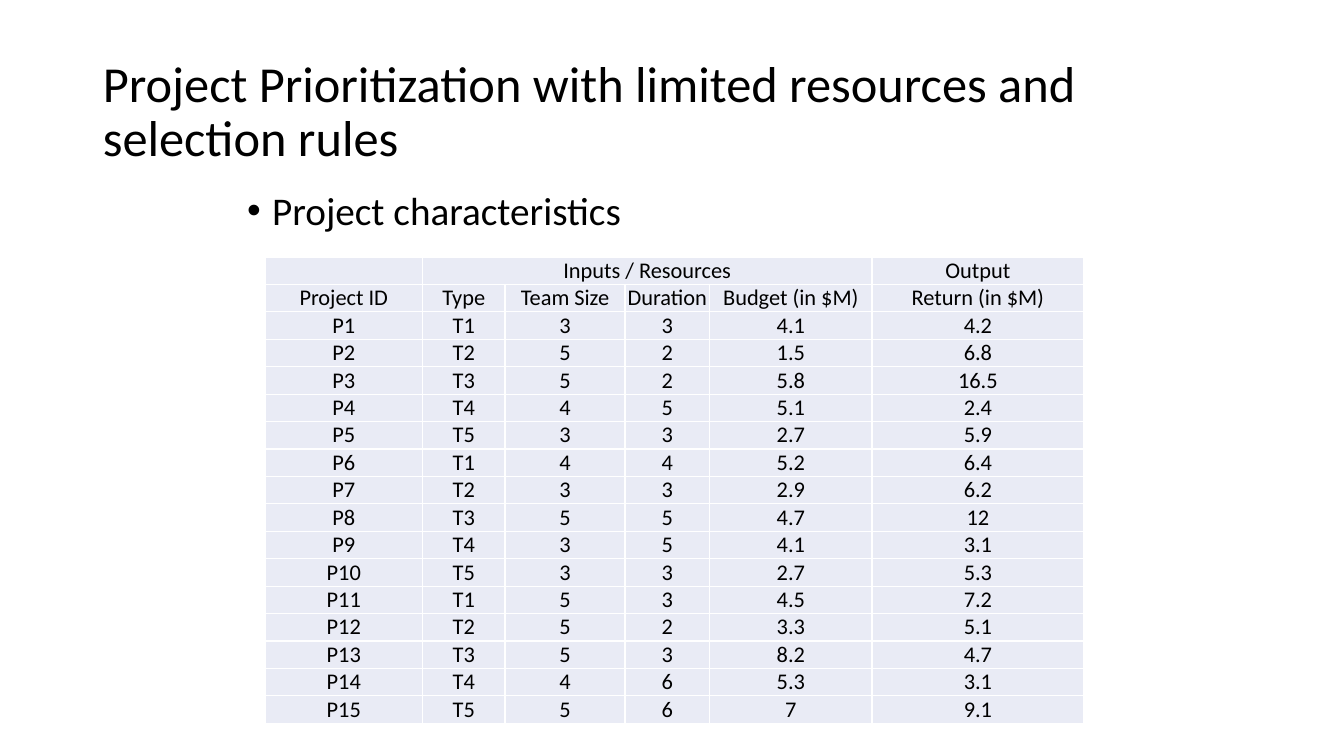
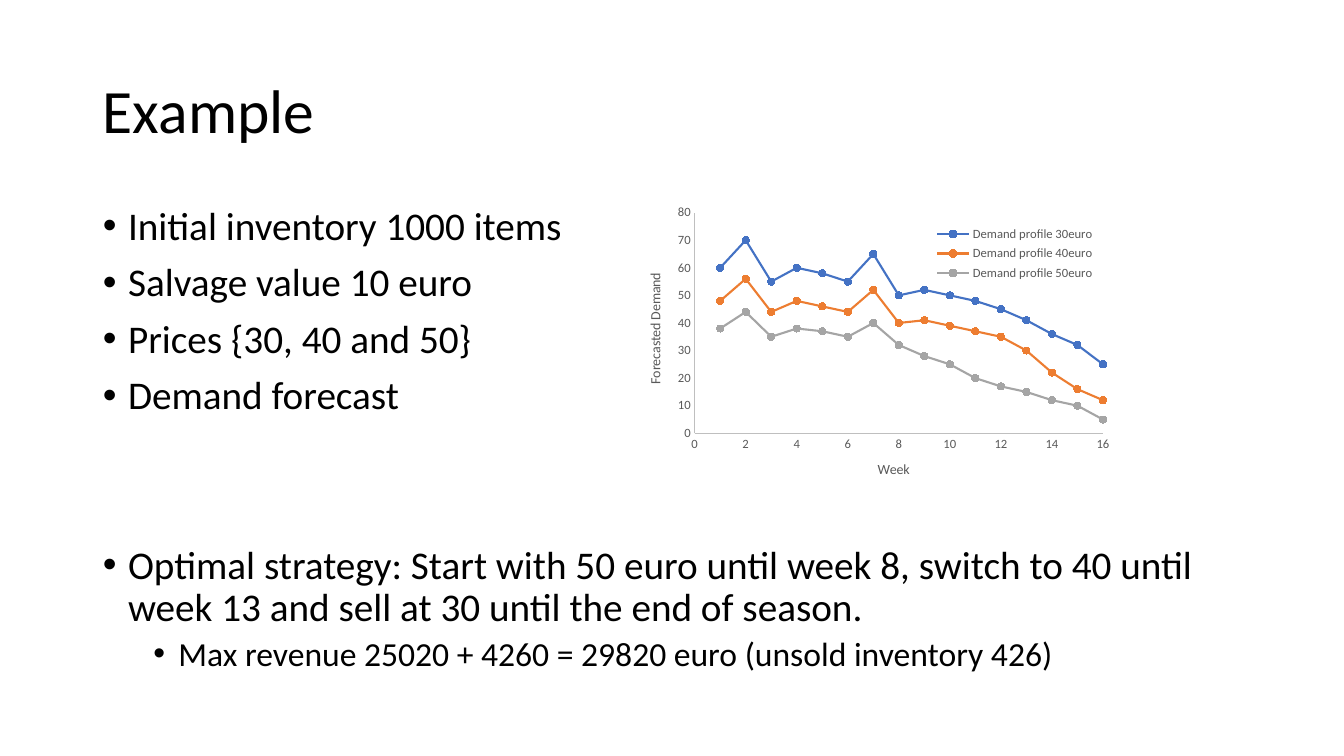
from lxml import etree
from pptx import Presentation
from pptx.chart.data import XyChartData
from pptx.dml.color import RGBColor
from pptx.enum.chart import XL_CHART_TYPE, XL_LEGEND_POSITION, XL_MARKER_STYLE, XL_TICK_MARK
from pptx.enum.text import MSO_ANCHOR, MSO_AUTO_SIZE, PP_ALIGN
from pptx.oxml.ns import qn
from pptx.util import Inches, Pt

SCATTER = XL_CHART_TYPE.XY_SCATTER_LINES
LEGEND_RIGHT = XL_LEGEND_POSITION.RIGHT
CIRCLE = XL_MARKER_STYLE.CIRCLE
NO_TICK = XL_TICK_MARK.NONE
MIDDLE, BOTTOM = MSO_ANCHOR.MIDDLE, MSO_ANCHOR.BOTTOM
LEFT, CENTER = PP_ALIGN.LEFT, PP_ALIGN.CENTER
NO_FIT = MSO_AUTO_SIZE.NONE

FONT = "Calibri"
BLACK, WHITE, GREY, AXIS_GREY = "000000", "FFFFFF", "595959", "BFBFBF"
CELL_FILL = "E9EBF5"
TITLE_BOX = (0.92, 0.4, 11.5, 1.45)
LEVELS = [  # text size, indent and space before of each list level
    {"size": 28, "margin": 0.25, "before": 10},
    {"size": 24, "margin": 0.75, "before": 5},
]
HANGING = 0.25


def color(value):
    return RGBColor.from_string(value)


def apply(target, formats):
    for name, value in formats.items():
        setattr(target, name, value)


def style_font(font, size, ink):
    apply(font, {"name": FONT, "size": Pt(size), "bold": False})
    font.color.rgb = color(ink)


def style_line(line, ink, width):
    line.color.rgb = color(ink)
    line.width = Pt(width)


def place(shape, box):
    apply(shape, dict(zip(("left", "top", "width", "height"), map(Inches, box))))


def set_layout(parent, position, box, inner=False):
    """Give a chart part a manual layout, in fractions of the chart."""
    for old in parent.findall(qn("c:layout")):
        parent.remove(old)
    layout = etree.Element(qn("c:layout"))
    manual = etree.SubElement(layout, qn("c:manualLayout"))
    values = [("layoutTarget", "inner")] if inner else []
    values += [("xMode", "edge"), ("yMode", "edge"), *zip("xywh", box)]
    for tag, value in values:
        etree.SubElement(manual, qn(f"c:{tag}"), val=str(value))
    parent.insert(position, layout)


class Deck:
    def __init__(self):
        self.prs = Presentation()
        apply(self.prs, {"slide_width": Inches(13.33), "slide_height": Inches(7.5)})
        self.slide = None

    def new_slide(self, title, size):
        self.slide = self.prs.slides.add_slide(self.prs.slide_layouts[1])
        heading = self.slide.shapes.title
        place(heading, TITLE_BOX)
        frame = heading.text_frame
        apply(frame, {"vertical_anchor": MIDDLE, "auto_size": NO_FIT, "word_wrap": True})
        paragraph = frame.paragraphs[0]
        apply(paragraph, {"alignment": LEFT, "line_spacing": 0.9})
        self.add_run(paragraph, title, size)

    def add_run(self, paragraph, text, size):
        run = paragraph.add_run()
        run.text = text
        style_font(run.font, size, BLACK)

    def bullets(self, box, items):
        """Fill the body with (text, level, space before or None)."""
        body = self.slide.placeholders[1]
        place(body, box)
        frame = body.text_frame
        apply(frame, {"auto_size": NO_FIT, "word_wrap": True})
        for number, (text, depth, gap) in enumerate(items):
            paragraph = frame.add_paragraph() if number else frame.paragraphs[0]
            level = LEVELS[depth]
            before = (gap or level["before"]) if number else 0
            props = paragraph._p.get_or_add_pPr()
            props.set("marL", str(Inches(level["margin"])))
            props.set("indent", str(-Inches(HANGING)))
            etree.SubElement(props, qn("a:buFont"), typeface="Arial")
            etree.SubElement(props, qn("a:buChar"), char="•")
            apply(paragraph, {"level": depth, "alignment": LEFT,
                              "line_spacing": 0.9, "space_before": Pt(before)})
            self.add_run(paragraph, text, level["size"])

    def table(self, left, top, widths, row_height, rows, size, merged):
        table = self.slide.shapes.add_table(
            len(rows), len(widths), Inches(left), Inches(top),
            Inches(sum(widths)), Inches(row_height * len(rows))).table
        apply(table, {"first_row": False, "horz_banding": False})
        for column, width in zip(table.columns, widths):
            column.width = Inches(width)
        for row, values in zip(table.rows, rows):
            row.height = Inches(row_height)
            for cell, value in zip(row.cells, values):
                self.cell(cell, value, size)
        first, last = merged
        table.cell(*first).merge(table.cell(*last))

    def cell(self, cell, text, size):
        sides = ("left", "right", "top", "bottom")
        apply(cell, {f"margin_{side}": 0 for side in sides})
        cell.vertical_anchor = BOTTOM
        props = cell._tc.get_or_add_tcPr()
        for side in "LRTB":
            border = etree.SubElement(props, qn(f"a:ln{side}"), w=str(Pt(1)))
            fill = etree.SubElement(border, qn("a:solidFill"))
            etree.SubElement(fill, qn("a:srgbClr"), val=WHITE)
        cell.fill.solid()
        cell.fill.fore_color.rgb = color(CELL_FILL)
        paragraph = cell.text_frame.paragraphs[0]
        paragraph.alignment = CENTER
        if text:
            self.add_run(paragraph, text, size)
        else:  # keeps the empty cell as low as its neighbours
            etree.SubElement(paragraph._p, qn("a:endParaRPr"), sz=str(size * 100))

    def axis(self, axis, title, top, step):
        apply(axis, {"minimum_scale": 0, "maximum_scale": top, "major_unit": step,
                     "has_major_gridlines": False, "has_minor_gridlines": False,
                     "major_tick_mark": NO_TICK, "minor_tick_mark": NO_TICK})
        style_line(axis.format.line, AXIS_GREY, 0.75)
        style_font(axis.tick_labels.font, 9, GREY)
        frame = axis.axis_title.text_frame
        frame.text = title
        style_font(frame.paragraphs[0].runs[0].font, 10, GREY)
        return frame

    def scatter(self, box, x_axis, y_axis, series, plot_box, legend_box):
        data = XyChartData()
        for name, _, values in series:
            points = data.add_series(name)
            for x, y in enumerate(values, 1):
                points.add_data_point(x, y)
        chart = self.slide.shapes.add_chart(SCATTER, *map(Inches, box), data).chart
        apply(chart, {"has_title": False, "has_legend": True})
        style_font(chart.font, 10, BLACK)
        plot = chart.plots[0]
        plot.vary_by_categories = False
        for line, (_, ink, _) in zip(plot.series, series):
            line.smooth = False
            style_line(line.format.line, ink, 1.5)
            apply(line.marker, {"style": CIRCLE, "size": 5})
            line.marker.format.fill.solid()
            line.marker.format.fill.fore_color.rgb = color(ink)
            style_line(line.marker.format.line, ink, 0.75)
        self.axis(chart.category_axis, *x_axis)
        side_title = self.axis(chart.value_axis, *y_axis)
        side_title._txBody.bodyPr.set("rot", "-5400000")
        side_title._txBody.bodyPr.set("vert", "horz")
        apply(chart.legend, {"position": LEGEND_RIGHT, "include_in_layout": True})
        style_font(chart.legend.font, 9, GREY)
        set_layout(chart.legend._element, 1, legend_box)
        set_layout(chart._chartSpace.chart.plotArea, 0, plot_box, inner=True)


# Team size, duration, budget and return of each project
PROJECTS = [
    "3 3 4.1 4.2", "5 2 1.5 6.8", "5 2 5.8 16.5", "4 5 5.1 2.4", "3 3 2.7 5.9",
    "4 4 5.2 6.4", "3 3 2.9 6.2", "5 5 4.7 12", "3 5 4.1 3.1", "3 3 2.7 5.3",
    "5 3 4.5 7.2", "5 2 3.3 5.1", "5 3 8.2 4.7", "4 6 5.3 3.1", "5 6 7 9.1",
]
TYPE_COUNT = 5
DEMAND = [
    ("Demand profile 30euro", "4472C4",
     [60, 70, 55, 60, 58, 55, 65, 50, 52, 50, 48, 45, 41, 36, 32, 25]),
    ("Demand profile 40euro", "ED7D31",
     [48, 56, 44, 48, 46, 44, 52, 40, 41, 39, 37, 35, 30, 22, 16, 12]),
    ("Demand profile 50euro", "A5A5A5",
     [38, 44, 35, 38, 37, 35, 40, 32, 28, 25, 20, 17, 15, 12, 10, 5]),
]


def main():
    deck = Deck()

    # Project table
    deck.new_slide("Project Prioritization with limited resources and selection rules", 36)
    deck.bullets((2.35, 1.85, 8.62, 4.35), [("Project characteristics", 0, None)])
    rows = [
        ["", "Inputs / Resources", "", "", "", "Output"],
        ["Project ID", "Type", "Team Size", "Duration", "Budget (in $M)", "Return (in $M)"],
    ]
    for index, figures in enumerate(PROJECTS):
        rows.append([f"P{index + 1}", f"T{index % TYPE_COUNT + 1}", *figures.split()])
    deck.table(2.63, 2.55, [1.56, 0.82, 1.19, 0.84, 1.61, 2.1], 0.27, rows, 16,
               merged=((0, 1), (0, 4)))

    # Pricing example with demand forecast
    deck.new_slide("Example", 44)
    deck.bullets((0.92, 2, 11.5, 4.76), [
        ("Initial inventory 1000 items", 0, None),
        ("Salvage value 10 euro", 0, None),
        ("Prices {30, 40 and 50}", 0, None),
        ("Demand forecast", 0, None),
        ("Optimal strategy: Start with 50 euro until week 8, switch to 40 until "
         "week 13 and sell at 30 until the end of season.", 0, 91),
        ("Max revenue 25020 + 4260 = 29820 euro (unsold inventory 426)", 1, None),
    ])
    deck.scatter((6.34, 1.9, 5, 3), ("Week", 16, 2), ("Forecasted Demand", 80, 10),
                 DEMAND, plot_box=(0.11, 0.07, 0.81, 0.73),
                 legend_box=(0.58, 0.1, 0.33, 0.21))

    deck.prs.save("out.pptx")


if __name__ == "__main__":
    main()
